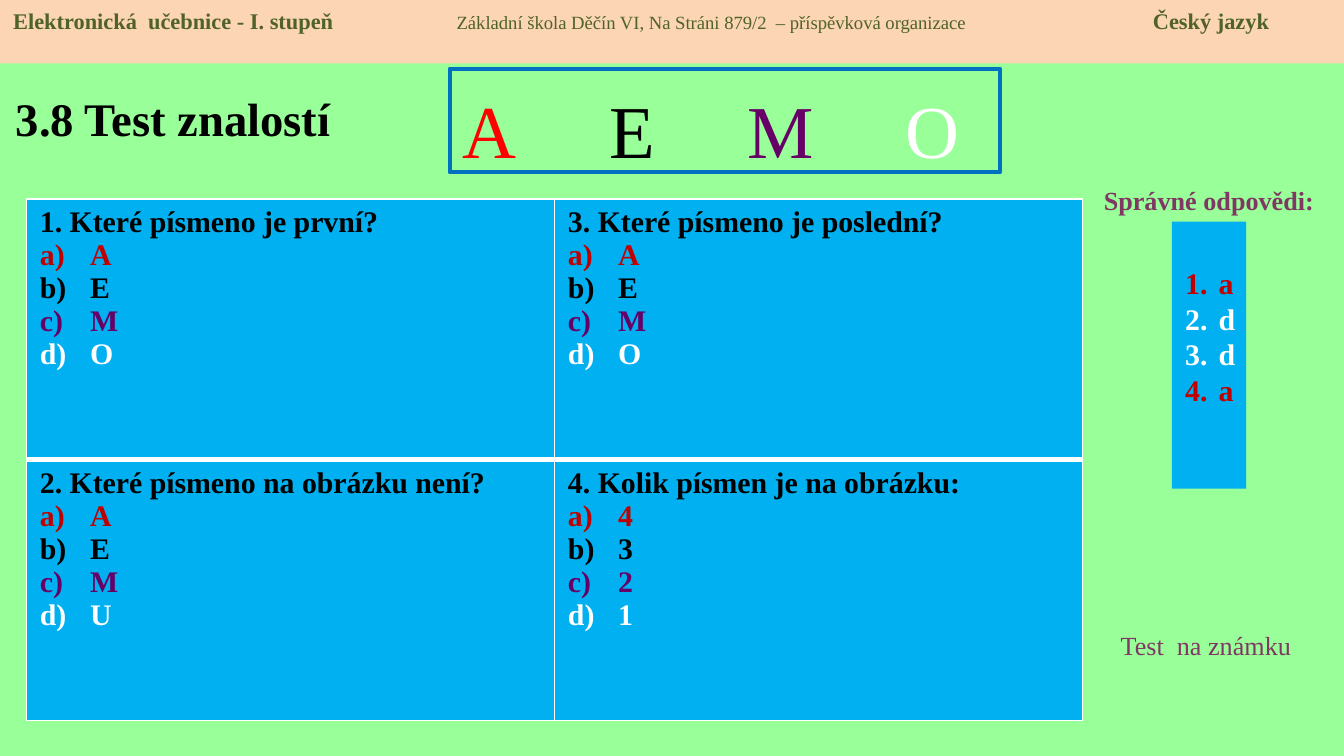
"""Build the letter quiz slide of a Czech language lesson."""
from dataclasses import dataclass

from lxml import etree
from pptx import Presentation
from pptx.dml.color import RGBColor
from pptx.enum.shapes import MSO_SHAPE
from pptx.enum.text import MSO_ANCHOR, PP_ALIGN
from pptx.oxml.ns import qn
from pptx.util import Cm, Pt

RECTANGLE = MSO_SHAPE.RECTANGLE
TOP, MIDDLE = MSO_ANCHOR.TOP, MSO_ANCHOR.MIDDLE
LEFT, CENTER = PP_ALIGN.LEFT, PP_ALIGN.CENTER
FONT = "Times New Roman"
COLORS = {
    "background": "99FF99", "banner": "FCD5B5", "panel": "00B0F0",
    "frame": "0070C0", "olive": "4F6228", "plum": "813763",
    "black": "000000", "white": "FFFFFF", "red": "FF0000",
    "dark_red": "C00000", "purple": "660066",
}
OPTION_COLORS = ("dark_red", "black", "purple", "white")


@dataclass(frozen=True)
class Span:
    text: str
    color: str
    size: float
    bold: bool = False


@dataclass(frozen=True)
class Line:
    spans: tuple[Span, ...]
    numbering: str = ""
    indent: float = 0
    tabs: tuple[float, ...] = ()
    align: PP_ALIGN = LEFT
    spacing: float | None = None


@dataclass(frozen=True)
class Block:
    left: float
    top: float
    width: float
    height: float
    lines: tuple[Line, ...]
    fill: str = ""
    outline: str = ""
    anchor: MSO_ANCHOR = TOP
    margin_top: float = 0.13
    margin_right: float = 0.25


@dataclass(frozen=True)
class Question:
    text: str
    options: str


def rgb(name: str) -> RGBColor:
    return RGBColor.from_string(COLORS[name])


def write_lines(frame, lines: tuple[Line, ...]) -> None:
    for index, line in enumerate(lines):
        paragraph = frame.add_paragraph() if index else frame.paragraphs[0]
        paragraph.alignment = line.align
        if line.spacing:
            paragraph.line_spacing = Pt(line.spacing)
        properties = paragraph._p.get_or_add_pPr()
        if line.numbering:
            properties.set("marL", str(Cm(line.indent)))
            properties.set("indent", str(-Cm(line.indent)))
            etree.SubElement(properties, qn("a:buAutoNum"), type=line.numbering)
        if line.tabs:
            tab_list = etree.SubElement(properties, qn("a:tabLst"))
            for position in line.tabs:
                etree.SubElement(tab_list, qn("a:tab"), pos=str(Cm(position)), algn="l")
        for span in line.spans:
            run = paragraph.add_run()
            run.text = span.text
            run.font.name = FONT
            run.font.size = Pt(span.size)
            run.font.bold = span.bold
            run.font.color.rgb = rgb(span.color)


def draw_block(slide, block: Block) -> None:
    place = [Cm(value) for value in (block.left, block.top, block.width, block.height)]
    if block.fill or block.outline:
        shape = slide.shapes.add_shape(RECTANGLE, *place)
        shape.shadow.inherit = False
        if block.fill:
            shape.fill.solid()
            shape.fill.fore_color.rgb = rgb(block.fill)
        else:
            shape.fill.background()
        if block.outline:
            shape.line.color.rgb = rgb(block.outline)
            shape.line.width = Pt(2.25)
        else:
            shape.line.fill.background()
    else:
        shape = slide.shapes.add_textbox(*place)
    frame = shape.text_frame
    frame.word_wrap = True
    frame.vertical_anchor = block.anchor
    frame.margin_top = Cm(block.margin_top)
    frame.margin_right = Cm(block.margin_right)
    write_lines(frame, block.lines)


def set_border(cell, side: str, width: float) -> None:
    border = etree.Element(qn(f"a:{side}"), w=str(Pt(width)))
    fill = etree.SubElement(border, qn("a:solidFill"))
    etree.SubElement(fill, qn("a:srgbClr"), val=COLORS["white"])
    properties = cell._tc.get_or_add_tcPr()
    position = ("lnL", "lnR", "lnT", "lnB").index(side)
    properties.insert(position, border)


def draw_questions(slide, grid: tuple[tuple[Question, ...], ...]) -> None:
    table = slide.shapes.add_table(
        len(grid), len(grid[0]), Cm(0.5), Cm(3.76), Cm(19.96), Cm(9.86)
    ).table
    for row, questions in enumerate(grid):
        for column, question in enumerate(questions):
            cell = table.cell(row, column)
            cell.fill.solid()
            cell.fill.fore_color.rgb = rgb("panel")
            widths = {"lnL": 1, "lnR": 1, "lnT": 3 if row else 1, "lnB": 1 if row else 3}
            for side, width in widths.items():
                set_border(cell, side, width)
            heading = Line((Span(question.text, "black", 16, True),))
            options = tuple(
                Line((Span(option, color, 16, True),), "alphaLcParenR", 0.95)
                for option, color in zip(question.options, OPTION_COLORS)
            )
            write_lines(cell.text_frame, (heading, *options))


QUESTIONS = (
    (Question("1. Které písmeno je první?", "AEMO"),
     Question("3. Které písmeno je poslední?", "AEMO")),
    (Question("2. Které písmeno na obrázku není?", "AEMU"),
     Question("4. Kolik písmen je na obrázku:", "4321")),
)
ANSWERS = (("a", "dark_red"), ("d", "white"), ("d", "white"), ("a", "dark_red"))

TITLE = Block(0.05, 1.4, 8.1, 1.65,
              (Line((Span("3.8 Test znalostí", "black", 25, True),)),), anchor=MIDDLE)
ANSWERS_HEADING = Block(20.45, 3.35, 4.8, 0.86, (
    Line((Span("Správné odpovědi:", "plum", 14, True),), align=CENTER),))
ANSWER_KEY = Block(22.15, 4.19, 1.4, 5.05, tuple(
    Line((Span(answer, color, 16, True),), "arabicPeriod", 0.63, spacing=19)
    for answer, color in ANSWERS
), fill="panel", margin_top=0.83, margin_right=0)
GRADED_TEST = Block(20.93, 11.76, 3.99, 0.86,
                    (Line((Span("Test  na známku", "plum", 14),)),))
BANNER = Block(0, 0, 25.4, 1.2, (Line((
    Span("Elektronická  učebnice - I. stupeň", "olive", 12, True),
    Span("\tZákladní škola Děčín VI, Na Stráni 879/2  – příspěvková organizace", "olive", 10),
    Span("\tČeský jazyk", "olive", 12, True),
), tabs=(8.38, 21.54)),), fill="banner")
LETTERS = Block(8.5, 1.3, 10.4, 1.96, (Line((
    Span("A", "red", 40), Span("\tE", "black", 40),
    Span("\tM", "purple", 40), Span("\tO", "white", 40),
), tabs=(2.77, 5.37, 8.37)),), outline="frame", margin_top=0.29)


def main() -> None:
    presentation = Presentation()
    presentation.slide_width, presentation.slide_height = Cm(25.4), Cm(14.29)
    slide = presentation.slides.add_slide(presentation.slide_layouts[6])
    slide.background.fill.solid()
    slide.background.fill.fore_color.rgb = rgb("background")
    for block in (TITLE, ANSWERS_HEADING):
        draw_block(slide, block)
    draw_questions(slide, QUESTIONS)
    for block in (ANSWER_KEY, GRADED_TEST, BANNER, LETTERS):
        draw_block(slide, block)
    presentation.save("out.pptx")


if __name__ == "__main__":
    main()
